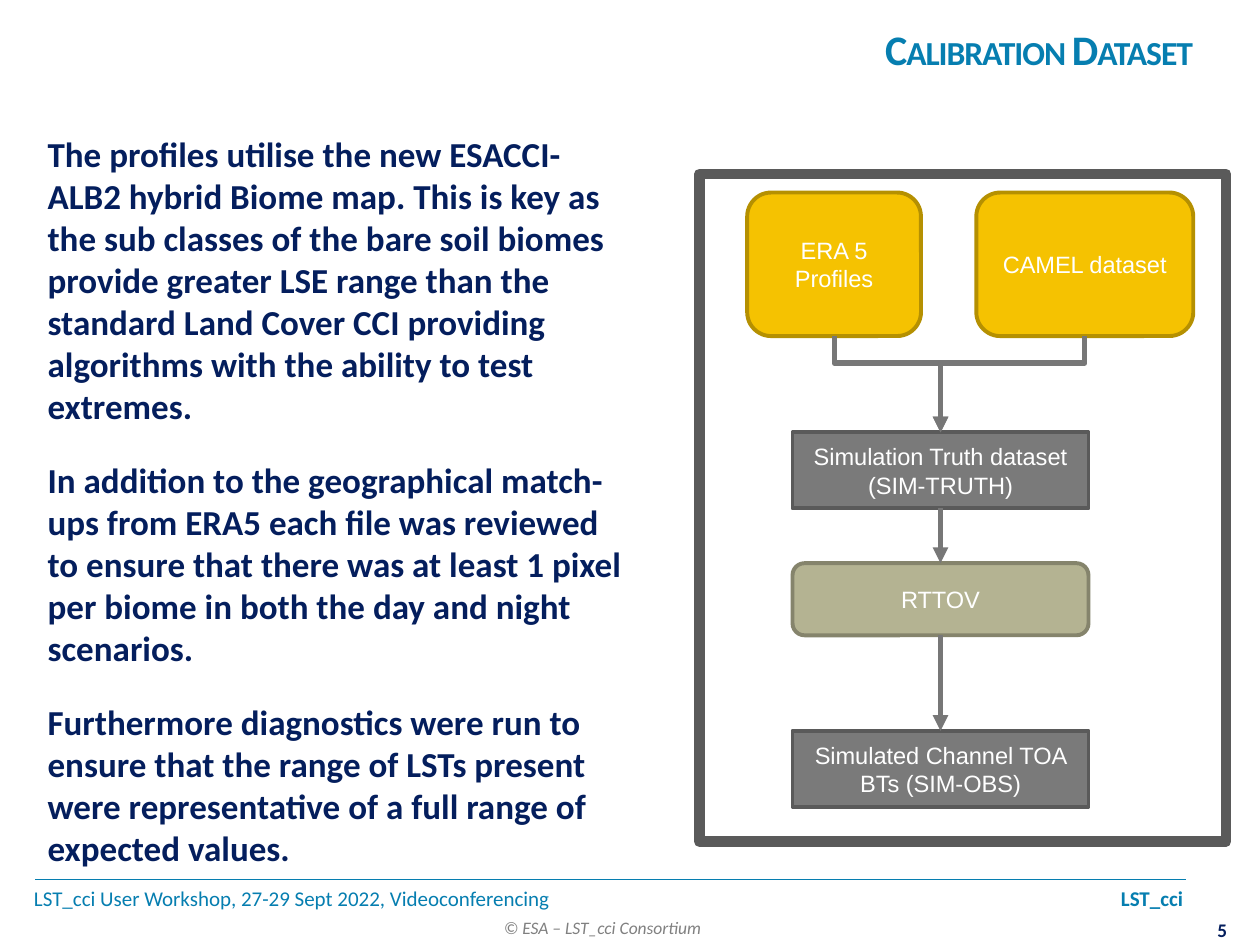
import dataclasses

import lxml.etree
import pptx
import pptx.dml.color
import pptx.enum.shapes
import pptx.enum.text
import pptx.oxml.ns
import pptx.util

COLOURS = {
    "brand": "067EB0", "navy": "041E5D", "credit": "808080", "white": "FFFFFF",
    "amber": "F5C201", "amber_edge": "B59001",
    "grey": "7A7A7A", "grey_edge": "5A5A5A",
    "olive": "B4B392", "olive_edge": "85846C", "arrow": "777777",
}
SHAPE = pptx.enum.shapes.MSO_SHAPE
LINK = pptx.enum.shapes.MSO_CONNECTOR
ALIGN = pptx.enum.text.PP_ALIGN
MIDDLE = pptx.enum.text.MSO_ANCHOR.MIDDLE
BOTTOM_SITE, TOP_SITE = 2, 0
BODY = [
    "The profiles utilise the new ESACCI-ALB2 hybrid Biome map. This is key as the "
    "sub classes of the bare soil biomes provide greater LSE range than the standard "
    "Land Cover CCI providing algorithms with the ability to test extremes.",
    "In addition to the geographical match-ups from ERA5 each file was reviewed to "
    "ensure that there was at least 1 pixel per biome in both the day and night scenarios.",
    "Furthermore diagnostics were run to ensure that the range of LSTs present were "
    "representative of a full range of expected values.",
]
# name: text, preset, colour, (left, top, width, height) in percent of the panel
NODES = {
    "era": ("ERA 5 Profiles", SHAPE.ROUNDED_RECTANGLE, "amber", (9.1, 2.8, 33, 21.5)),
    "camel": ("CAMEL dataset", SHAPE.ROUNDED_RECTANGLE, "amber", (52.6, 2.8, 41.2, 21.5)),
    "truth": ("Simulation Truth dataset (SIM-TRUTH)", SHAPE.RECTANGLE, "grey",
              (17.7, 38.7, 56.2, 11.4)),
    "rttov": ("RTTOV", SHAPE.ROUNDED_RECTANGLE, "olive", (17.7, 58.3, 56.2, 10.8)),
    "obs": ("Simulated Channel TOA BTs (SIM-OBS)", SHAPE.RECTANGLE, "grey",
            (17.7, 83.4, 56.2, 11.4)),
}


@dataclasses.dataclass
class Area:
    left: int
    top: int
    width: int
    height: int

    def inner(self, left, top, width, height):
        """Return the inner area given in percent of this one."""
        return Area(round(self.left + self.width * left / 100),
                    round(self.top + self.height * top / 100),
                    round(self.width * width / 100),
                    round(self.height * height / 100))

    def bounds(self):
        return self.left, self.top, self.width, self.height


def rgb(name):
    return pptx.dml.color.RGBColor.from_string(COLOURS[name])


def style_font(para, size, colour, face="Calibri", bold=False, italic=False):
    font = para.font
    font.name, font.size = face, pptx.util.Pt(size)
    font.bold, font.italic = bold, italic
    font.color.rgb = rgb(colour)


def add_text(page, area, text, margins=None, wrap=True):
    """Add a text box; margins are (side, top and bottom) in inches."""
    frame = page.shapes.add_textbox(*area.bounds()).text_frame
    frame.word_wrap = wrap
    if margins:
        side, end = (pptx.util.Inches(value) for value in margins)
        frame.margin_left = frame.margin_right = side
        frame.margin_top = frame.margin_bottom = end
    frame.text = text
    return frame


def add_title(page, area):
    frame = add_text(page, area, "Calibration Dataset")
    frame.vertical_anchor = MIDDLE
    para = frame.paragraphs[0]
    para.alignment = ALIGN.RIGHT
    style_font(para, 24, "brand", bold=True)
    properties = para.runs[0]._r.get_or_add_rPr()
    properties.set("cap", "small")
    properties.set("spc", "-60")


def add_body(page, area):
    frame = add_text(page, area, "\n".join(BODY))
    for number, para in enumerate(frame.paragraphs):
        para.space_before = pptx.util.Pt(12 if number else 0)
        para.space_after = pptx.util.Pt(6)
        style_font(para, 20, "navy", bold=True)


def add_node(page, area, text, preset, colour):
    node = page.shapes.add_shape(preset, *area.bounds())
    node.shadow.inherit = False
    node.fill.solid()
    node.fill.fore_color.rgb = rgb(colour)
    node.line.color.rgb = rgb(colour + "_edge")
    node.line.width = pptx.util.Pt(2.25)
    frame = node.text_frame
    frame.word_wrap = True
    frame.vertical_anchor = MIDDLE
    frame.text = text
    frame.paragraphs[0].alignment = ALIGN.CENTER
    style_font(frame.paragraphs[0], 13.5, "white", "Arial")
    return node


def add_line(page, kind, start, end, colour, width):
    line = page.shapes.add_connector(kind, *start, *end)
    line.line.color.rgb = rgb(colour)
    line.line.width = pptx.util.Pt(width)
    lxml.etree.SubElement(line._element.spPr, pptx.oxml.ns.qn("a:effectLst"))
    return line


def turn_elbow(link, start, end, bend=28):
    """Make an elbow leave downwards, bending at a percent of its drop."""
    across, drop = end[0] - start[0], end[1] - start[1]
    span = abs(across)
    link.left = (start[0] + end[0] - drop) // 2
    link.top = (start[1] + end[1] - span) // 2
    link.width, link.height = drop, span
    properties = link._element.spPr
    frame = properties.find(pptx.oxml.ns.qn("a:xfrm"))
    for name in ("flipH", "flipV"):
        frame.attrib.pop(name, None)
    frame.set("rot", str((270 if across > 0 else 90) * 60000))
    if across > 0:
        frame.set("flipH", "1")
    guides = properties.find(".//" + pptx.oxml.ns.qn("a:avLst"))
    lxml.etree.SubElement(guides, pptx.oxml.ns.qn("a:gd"),
                          name="adj1", fmla=f"val {bend * 1000}")


def link_nodes(page, upper, lower):
    start = upper.left + upper.width // 2, upper.top + upper.height
    end = lower.left + lower.width // 2, lower.top
    straight = start[0] == end[0]
    link = add_line(page, LINK.STRAIGHT if straight else LINK.ELBOW,
                    start, end, "arrow", 3)
    link.begin_connect(upper, BOTTOM_SITE)
    link.end_connect(lower, TOP_SITE)
    if not straight:
        turn_elbow(link, start, end)
    lxml.etree.SubElement(link.line._get_or_add_ln(),
                          pptx.oxml.ns.qn("a:tailEnd"), type="triangle")


def add_flow(page, area):
    nodes = {name: add_node(page, area.inner(*place), text, preset, colour)
             for name, (text, preset, colour, place) in NODES.items()}
    for upper, lower in (("era", "truth"), ("camel", "truth"),
                         ("truth", "rttov"), ("rttov", "obs")):
        link_nodes(page, nodes[upper], nodes[lower])
    border = page.shapes.add_shape(SHAPE.RECTANGLE, *area.bounds())
    border.shadow.inherit = False
    border.fill.background()
    border.line.color.rgb = rgb("grey_edge")
    border.line.width = pptx.util.Pt(6)


def add_footer(page, area):
    event = add_text(page, area.inner(2.7, 0, 91.4, 57.7),
                     "LST_cci User Workshop, 27-29 Sept 2022, Videoconferencing\t",
                     (0, 0.05)).paragraphs[0]
    tabs = lxml.etree.SubElement(event._p.get_or_add_pPr(), pptx.oxml.ns.qn("a:tabLst"))
    lxml.etree.SubElement(tabs, pptx.oxml.ns.qn("a:tab"),
                          pos=str(pptx.util.Inches(9.12)), algn="r")
    style_font(event, 12, "brand")
    project = event.add_run()
    project.text = "LST_cci"
    project.font.bold = True

    rule = area.inner(2.8, 0, 91.3, 0)
    add_line(page, LINK.STRAIGHT, (rule.left, rule.top),
             (rule.left + rule.width, rule.top), "brand", 1)
    rights = add_text(page, area.inner(39, 48, 17.9, 52),
                      "© ESA – LST_cci Consortium", wrap=False)
    style_font(rights.paragraphs[0], 10, "credit", italic=True)
    number = add_text(page, area.inner(95.7, 59.6, 2.6, 36.5), "5", (0, 0), wrap=False)
    number.paragraphs[0].alignment = ALIGN.CENTER
    style_font(number.paragraphs[0], 11, "navy", bold=True)


def main():
    deck = pptx.Presentation()
    deck.slide_width, deck.slide_height = pptx.util.Inches(10), pptx.util.Inches(7.5)
    page = deck.slides.add_slide(deck.slide_layouts[6])
    sheet = Area(0, 0, deck.slide_width, deck.slide_height)
    add_footer(page, sheet.inner(0, 93.07, 100, 6.93))
    add_flow(page, sheet.inner(55.5, 18.4, 41.8, 70.67))
    add_title(page, sheet.inner(35, 0.67, 59.1, 8.93))
    add_body(page, sheet.inner(2.8, 13.4, 48, 76))
    deck.save("out.pptx")


if __name__ == "__main__":
    main()
